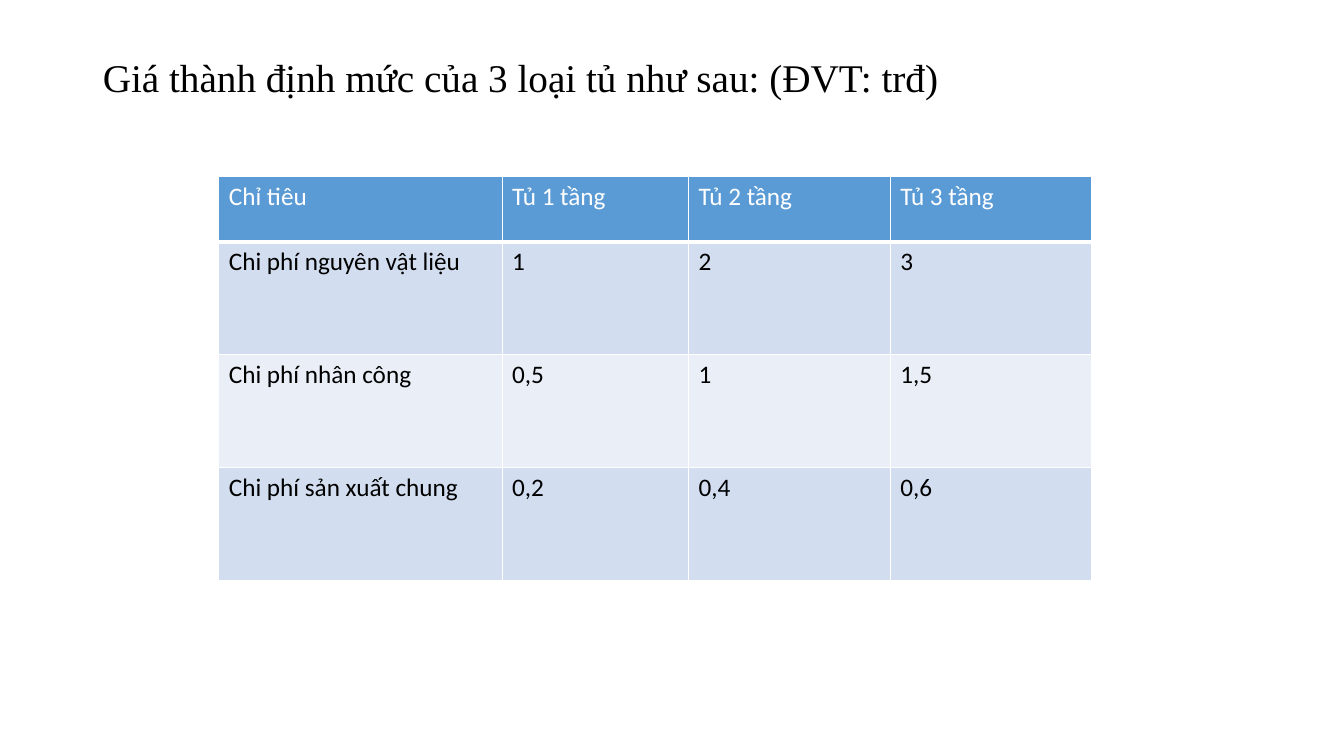
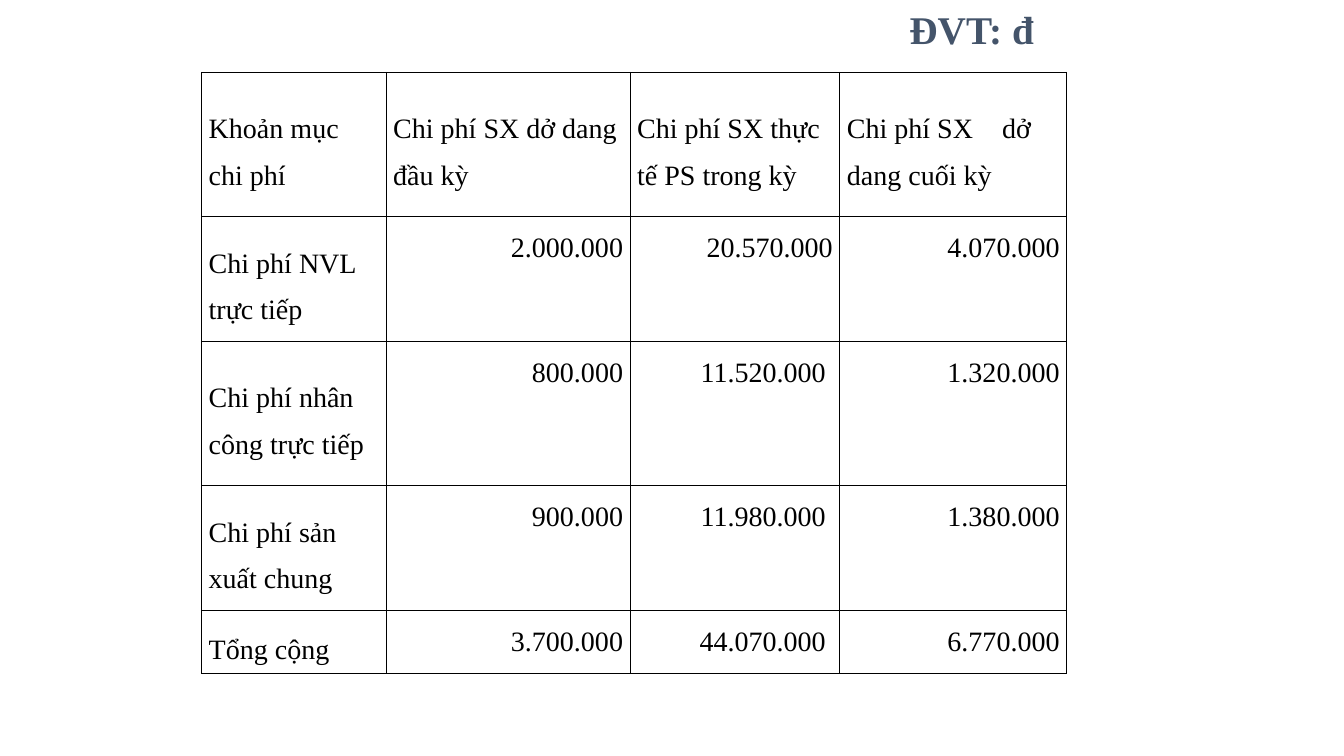
from lxml import etree
from pptx import Presentation
from pptx.dml.color import RGBColor
from pptx.enum.text import MSO_ANCHOR, MSO_AUTO_SIZE, PP_ALIGN
from pptx.oxml.ns import qn
from pptx.util import Inches, Pt

TOP, MIDDLE = MSO_ANCHOR.TOP, MSO_ANCHOR.MIDDLE
LEFT, RIGHT = PP_ALIGN.LEFT, PP_ALIGN.RIGHT
NO_FIT = MSO_AUTO_SIZE.NONE

BLACK = RGBColor(0x00, 0x00, 0x00)
WHITE = RGBColor(0xFF, 0xFF, 0xFF)
SLATE = RGBColor(0x44, 0x54, 0x6A)
BLUE = RGBColor(0x5B, 0x9B, 0xD5)
BANDS = (RGBColor(0xD2, 0xDE, 0xEF), RGBColor(0xEA, 0xEF, 0xF7))
SERIF, SANS = "Times New Roman", "Calibri"
TITLE_SIZE = 28
TITLE_ONLY = 5

STANDARD_COSTS = [
    ("Chỉ tiêu", "Tủ 1 tầng", "Tủ 2 tầng", "Tủ 3 tầng"),
    ("Chi phí nguyên vật liệu", "1", "2", "3"),
    ("Chi phí nhân công", "0,5", "1", "1,5"),
    ("Chi phí sản xuất chung", "0,2", "0,4", "0,6"),
]
PRODUCTION_COSTS = [
    ("Khoản mục\vchi phí", "Chi phí SX dở dang đầu kỳ",
     "Chi phí SX thực tế PS trong kỳ", "Chi phí SX\tdở dang cuối kỳ"),
    ("Chi phí NVL trực tiếp", "2.000.000", "20.570.000", "4.070.000"),
    ("Chi phí nhân công trực tiếp", "800.000", "11.520.000 ", "1.320.000"),
    ("Chi phí sản xuất chung", "900.000", "11.980.000 ", "1.380.000"),
    ("Tổng cộng", "3.700.000", "44.070.000 ", "6.770.000"),
]
TAB_STOP = Inches(1.54)


def set_format(target, values):
    for name, value in values.items():
        setattr(target, name, value)


def set_font(font, face, size, color, bold=False):
    set_format(font, {"name": face, "size": Pt(size), "bold": bold})
    font.color.rgb = color


def add_titled_slide(deck, title, box, inset, color, bold=False, spacing=1.0):
    slide = deck.slides.add_slide(deck.slide_layouts[TITLE_ONLY])
    heading = slide.shapes.title
    set_format(heading, dict(zip(("left", "top", "width", "height"), map(Inches, box))))
    frame = heading.text_frame
    frame.text = title
    set_format(frame, {"vertical_anchor": TOP, "margin_top": Inches(inset),
                       "word_wrap": True, "auto_size": NO_FIT})
    paragraph = frame.paragraphs[0]
    set_format(paragraph, {"alignment": LEFT, "line_spacing": spacing})
    set_font(paragraph.runs[0].font, SERIF, TITLE_SIZE, color, bold)
    return slide


def set_borders(cell, color, bottom=1):
    properties = cell._tc.get_or_add_tcPr()
    for place, (side, points) in enumerate(
            (("lnL", 1), ("lnR", 1), ("lnT", 1), ("lnB", bottom))):
        line = etree.Element(qn(f"a:{side}"), w=str(Pt(points)))
        fill = etree.SubElement(line, qn("a:solidFill"))
        etree.SubElement(fill, qn("a:srgbClr"), val=str(color))
        properties.insert(place, line)


def add_tab_stop(paragraph, position):
    stops = etree.SubElement(paragraph._p.get_or_add_pPr(), qn("a:tabLst"))
    etree.SubElement(stops, qn("a:tab"), pos=str(position), algn="l")


def add_cost_table(slide, rows, left, top, widths, heights, style_cell):
    table = slide.shapes.add_table(
        len(rows), len(widths), Inches(left), Inches(top),
        Inches(sum(widths)), Inches(sum(heights))).table
    set_format(table, {"first_row": False, "horz_banding": False})
    for column, width in zip(table.columns, widths):
        column.width = Inches(width)
    for r, (texts, height) in enumerate(zip(rows, heights)):
        table.rows[r].height = Inches(height)
        for c, text in enumerate(texts):
            cell = table.cell(r, c)
            cell.text = text
            style_cell(cell, r, c)


def style_banded(cell, r, c):
    header = r == 0
    cell.fill.solid()
    cell.fill.fore_color.rgb = BLUE if header else BANDS[(r - 1) % 2]
    set_font(cell.text_frame.paragraphs[0].font, SANS, 18, WHITE if header else BLACK)
    set_borders(cell, WHITE, 3 if header else 1)


def style_ruled(cell, r, c):
    amount = r > 0 and c > 0
    cell.fill.background()
    set_format(cell, {"margin_left": Inches(0.07), "margin_right": Inches(0.07),
                      "margin_top": 0, "margin_bottom": 0,
                      "vertical_anchor": TOP if amount else MIDDLE})
    paragraph = cell.text_frame.paragraphs[0]
    set_format(paragraph, {"alignment": RIGHT if amount else LEFT, "line_spacing": 1.5})
    if "\t" in cell.text:
        add_tab_stop(paragraph, TAB_STOP)
    for run in paragraph.runs:
        set_font(run.font, SERIF, 20, BLACK)
    set_borders(cell, BLACK)


def main():
    deck = Presentation()
    set_format(deck, {"slide_width": Inches(13.33), "slide_height": Inches(7.5)})

    standard = add_titled_slide(
        deck, "Giá thành định mức của 3 loại tủ như sau: (ĐVT: trđ)",
        (0.92, 0.4, 11.5, 1.45), 0.18, BLACK, spacing=0.9)
    add_cost_table(standard, STANDARD_COSTS, 2.17, 1.75,
                   (2.81, 1.85, 2, 2), (0.65, 1.12, 1.12, 1.12), style_banded)

    production = add_titled_slide(
        deck, "ĐVT: đ", (8.92, 0, 1.67, 0.57), 0.05, SLATE, bold=True)
    add_cost_table(production, PRODUCTION_COSTS, 2, 0.72,
                   (1.83, 2.42, 2.08, 2.25), (1.43, 1.24, 1.43, 1.24, 0.62), style_ruled)

    deck.save("out.pptx")


if __name__ == "__main__":
    main()
